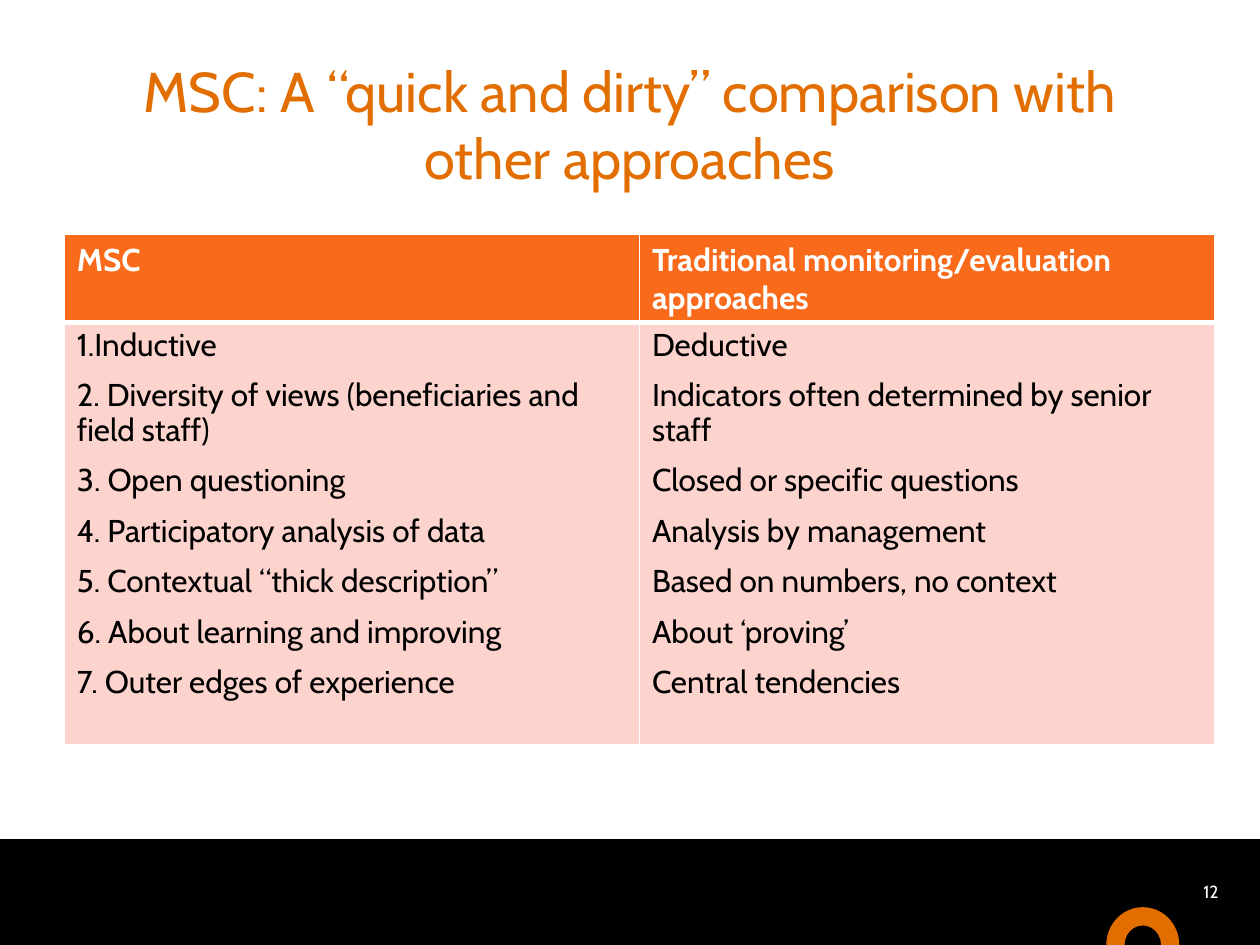
from lxml.etree import SubElement
from pptx import Presentation
from pptx.dml.color import RGBColor as RGB
from pptx.enum.shapes import MSO_SHAPE as SHAPE
from pptx.enum.text import MSO_ANCHOR as ANCHOR, PP_ALIGN as ALIGN
from pptx.oxml.ns import qn
from pptx.util import Inches, Pt

FONT = "Cabin"
HUES = {"title": "E26E00", "head": "F96A1B", "body": "FDD4CD",
        "white": "FFFFFF", "black": "000000"}
HEADS = ["MSC", "Traditional monitoring/evaluation approaches"]
ROWS = [
    ("1.Inductive", "Deductive"),
    ("2. Diversity of views (beneficiaries and field staff)",
     "Indicators often determined by senior staff"),
    ("3. Open questioning", "Closed or specific questions"),
    ("4. Participatory analysis of data", "Analysis by management"),
    ("5. Contextual “thick description”", "Based on numbers, no context"),
    ("6. About learning and improving", "About ‘proving’"),
    ("7. Outer edges of experience", "Central tendencies"),
]


def hue(name):
    return RGB.from_string(HUES[name])


def box(left, top, width, height):
    return [Inches(n) for n in (left, top, width, height)]


def add_run(para, text, size, color, bold=False):
    run = para.add_run()
    run.text = text
    run.font.name = FONT
    run.font.size = Pt(size)
    run.font.bold = bold
    run.font.color.rgb = hue(color)


def add_form(slide, kind, area, color):
    form = slide.shapes.add_shape(kind, *box(*area))
    form.shadow.inherit = False
    form.fill.solid()
    form.fill.fore_color.rgb = hue(color)
    form.line.fill.background()
    return form


def set_title(slide, text):
    title = slide.shapes.title
    title.left, title.top, title.width, title.height = box(0.89, 0.4, 8.22, 1.16)
    frame = title.text_frame
    frame.word_wrap = True
    frame.vertical_anchor = ANCHOR.MIDDLE
    para = frame.paragraphs[0]
    para.alignment = ALIGN.CENTER
    add_run(para, text, 32, "title")


def add_page(slide, number):
    frame = slide.shapes.add_textbox(*box(9.49, 6.96, 0.48, 0.28)).text_frame
    frame.word_wrap = True
    frame.margin_left = frame.margin_right = Inches(0.06)
    frame.margin_top = frame.margin_bottom = Inches(0.03)
    add_run(frame.paragraphs[0], number, 10, "white")


def set_edges(cell, widths):
    props = cell._tc.get_or_add_tcPr()
    for spot, (side, width) in enumerate(widths.items()):
        line = SubElement(props, qn(f"a:ln{side}"), w=str(Pt(width)))
        fill = SubElement(line, qn("a:solidFill"))
        SubElement(fill, qn("a:srgbClr"), val=HUES["white"])
        props.insert(spot, line)


def fill_cell(cell, texts, head):
    cell.fill.solid()
    cell.fill.fore_color.rgb = hue("head" if head else "body")
    set_edges(cell, {"L": 1, "R": 1, "T": 1 if head else 3, "B": 3 if head else 1})
    frame = cell.text_frame
    for spot, text in enumerate(texts):
        para = frame.add_paragraph() if spot else frame.paragraphs[0]
        if not head:
            para.line_spacing = 0.9
            para.space_before = Pt(9)
        add_run(para, text, 18, "white" if head else "black", head)


def add_grid(slide):
    table = slide.shapes.add_table(2, 2, *box(0.51, 1.86, 9.13, 4.05)).table
    for row, height in zip(table.rows, (0.7, 3.35)):
        row.height = Inches(height)
    for col, (head, texts) in enumerate(zip(HEADS, zip(*ROWS))):
        fill_cell(table.cell(0, col), [head], True)
        fill_cell(table.cell(1, col), texts, False)


def main():
    deck = Presentation()
    deck.slide_width, deck.slide_height = Inches(10), Inches(7.5)
    slide = deck.slides.add_slide(deck.slide_layouts[5])
    add_form(slide, SHAPE.RECTANGLE, (-0.02, 6.66, 10.04, 0.87), "black")
    arc = add_form(slide, SHAPE.BLOCK_ARC, (8.78, 7.2, 0.58, 0.6), "title")
    arc.adjustments[2] = 0.25
    add_page(slide, "12")
    set_title(slide, "MSC: A “quick and dirty” comparison with other approaches")
    add_grid(slide)
    deck.save("out.pptx")


if __name__ == "__main__":
    main()
